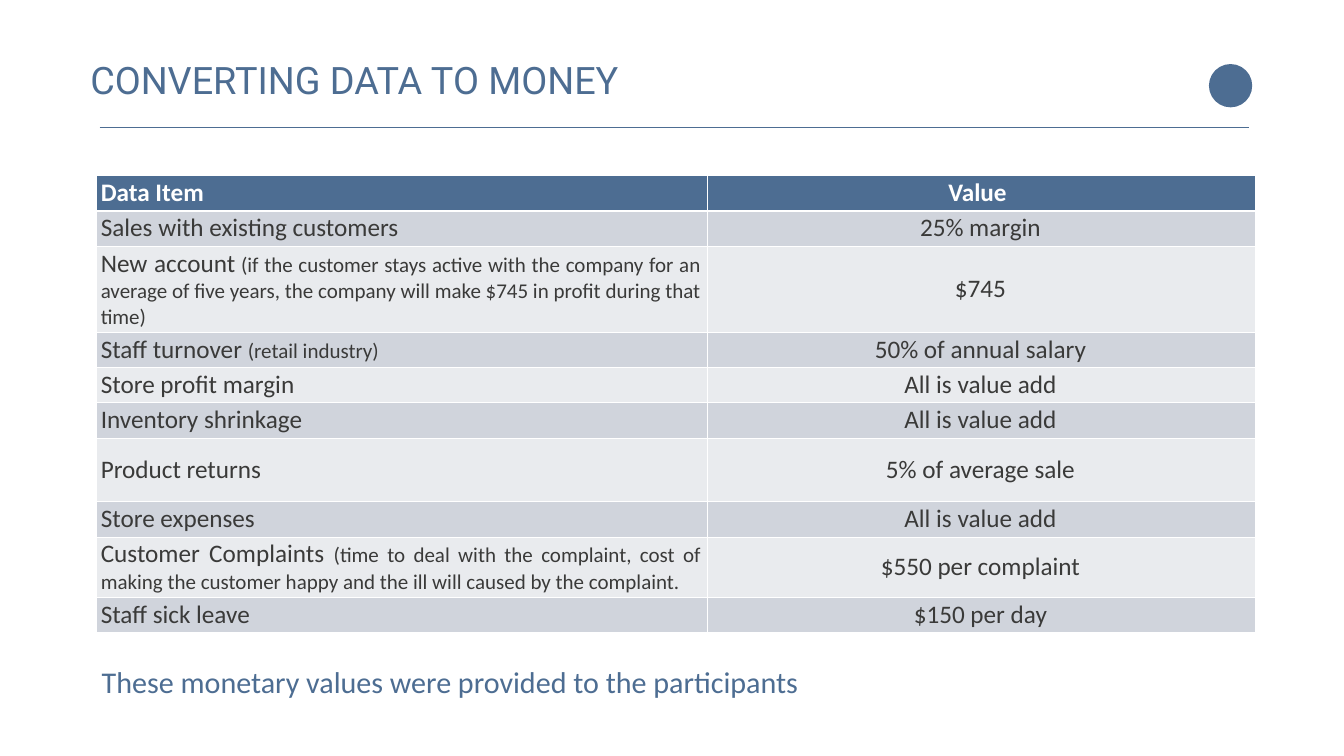
from lxml.etree import SubElement
from pptx import Presentation
from pptx.dml.color import RGBColor
from pptx.enum.shapes import MSO_CONNECTOR, MSO_SHAPE
from pptx.enum.text import MSO_ANCHOR, MSO_AUTO_SIZE, PP_ALIGN
from pptx.oxml.ns import qn
from pptx.util import Inches, Pt

BLUE = RGBColor(0x4D, 0x6D, 0x92)
INK = RGBColor(0x3A, 0x3A, 0x39)
WHITE = RGBColor(0xFF, 0xFF, 0xFF)
BANDS = [RGBColor(0xD0, 0xD4, 0xDC), RGBColor(0xE9, 0xEB, 0xEE)]

LEFT = 7.2
COLUMN_WIDTHS = [45.41, 40.83]
LINE, TALL = 4.67, 8.4
# Item, small note after it, value, row height
ROWS = [
    ("Data Item", "", "Value ", LINE),
    ("Sales with existing customers", "", "25% margin", LINE),
    ("New account", " (if the customer stays active with the company for an average of "
     "five years, the company will make $745 in profit during that time)", "$745", 11.33),
    ("Staff turnover ", "(retail industry)", "50% of annual salary", LINE),
    ("Store profit margin", "", "All is value add", LINE),
    ("Inventory shrinkage", "", "All is value add", LINE),
    ("Product returns", "", "5% of average sale", TALL),
    ("Store expenses", "", "All is value add", LINE),
    ("Customer Complaints ", "(time to deal with the complaint, cost of making the customer "
     "happy and the ill will caused by the complaint. ", "$550 per complaint", 8),
    ("Staff sick leave", "", "$150 per day", LINE),
]


class SlideBuilder:
    """Draws on one slide; lengths are percentages of its width and height."""

    def __init__(self, deck):
        self.deck = deck
        self.slide = deck.slides.add_slide(deck.slide_layouts[5])

    def across(self, share):
        return round(self.deck.slide_width * share / 100)

    def down(self, share):
        return round(self.deck.slide_height * share / 100)

    def area(self, left, top, width, height):
        return self.across(left), self.down(top), self.across(width), self.down(height)

    def style(self, font, size, color, name="Calibri", bold=False):
        font.name, font.size, font.bold = name, Pt(size), bold
        font.color.rgb = color

    def title(self, text, *place):
        box = self.slide.shapes.title
        box.left, box.top, box.width, box.height = self.area(*place)
        box.text_frame.text = text
        para = box.text_frame.paragraphs[0]
        para.alignment = PP_ALIGN.LEFT
        self.style(para.runs[0].font, 54, BLUE, "Roboto")

    def dot(self, *place):
        circle = self.slide.shapes.add_shape(MSO_SHAPE.OVAL, *self.area(*place))
        circle.shadow.inherit = False
        circle.fill.solid()
        circle.fill.fore_color.rgb = BLUE
        circle.line.fill.background()

    def rule(self, left, right, top):
        line = self.slide.shapes.add_connector(
            MSO_CONNECTOR.STRAIGHT, self.across(left), self.down(top),
            self.across(right), self.down(top))
        line.line.color.rgb = BLUE
        line.line.width = Pt(2.25)
        SubElement(line._element.spPr, qn("a:effectLst"))

    def caption(self, text, *place):
        frame = self.slide.shapes.add_textbox(*self.area(*place)).text_frame
        frame.word_wrap = False
        frame.auto_size = MSO_AUTO_SIZE.SHAPE_TO_FIT_TEXT
        frame.text = text
        self.style(frame.paragraphs[0].runs[0].font, 43, BLUE)

    def table(self, rows, left, top, widths):
        heights = [row[-1] for row in rows]
        place = self.area(left, top, sum(widths), sum(heights))
        table = self.slide.shapes.add_table(len(rows), len(widths), *place).table
        table.horz_banding = False
        for column, width in zip(table.columns, widths):
            column.width = self.across(width)
        for index, (item, note, value, height) in enumerate(rows):
            table.rows[index].height = self.down(height)
            item_alignment = PP_ALIGN.JUSTIFY if height > LINE and note else PP_ALIGN.LEFT
            self.cell(table.cell(index, 0), index, [item, note], item_alignment)
            self.cell(table.cell(index, 1), index, [value], PP_ALIGN.CENTER)

    def cell(self, cell, row, texts, alignment):
        header = row == 0
        self.borders(cell, top=3 if row == 1 else 1, bottom=3 if header else 1)
        cell.fill.solid()
        cell.fill.fore_color.rgb = BLUE if header else BANDS[(row - 1) % 2]
        cell.vertical_anchor = MSO_ANCHOR.TOP if header else MSO_ANCHOR.MIDDLE
        cell.margin_left, cell.margin_right = Inches(0.08), Inches(0.12)
        cell.margin_top = cell.margin_bottom = Inches(0.04)
        para = cell.text_frame.paragraphs[0]
        para.alignment = alignment
        for text, size in zip(texts, (36, 30)):
            if text:
                span = para.add_run()
                span.text = text
                self.style(span.font, size, WHITE if header else INK, bold=header)

    def borders(self, cell, top, bottom):
        properties = cell._tc.get_or_add_tcPr()
        for side, width in (("L", 1), ("R", 1), ("T", top), ("B", bottom)):
            line = SubElement(properties, qn(f"a:ln{side}"), w=str(Pt(width)))
            fill = SubElement(line, qn("a:solidFill"))
            SubElement(fill, qn("a:srgbClr"), val=str(WHITE))


def main():
    deck = Presentation()
    deck.slide_width, deck.slide_height = Inches(26.67), Inches(15)
    page = SlideBuilder(deck)
    page.dot(89.95, 8.47, 3.22, 5.73)
    page.rule(7.42, 92.95, 16.87)
    page.title("CONVERTING DATA TO MONEY", 6.34, 7.13, 70.87, 6.73)
    page.table(ROWS, LEFT, 23.2, COLUMN_WIDTHS)
    page.caption("These monetary values were provided to the participants",
                 LEFT, 87.47, 53.32, 5.47)
    deck.save("out.pptx")


if __name__ == "__main__":
    main()
